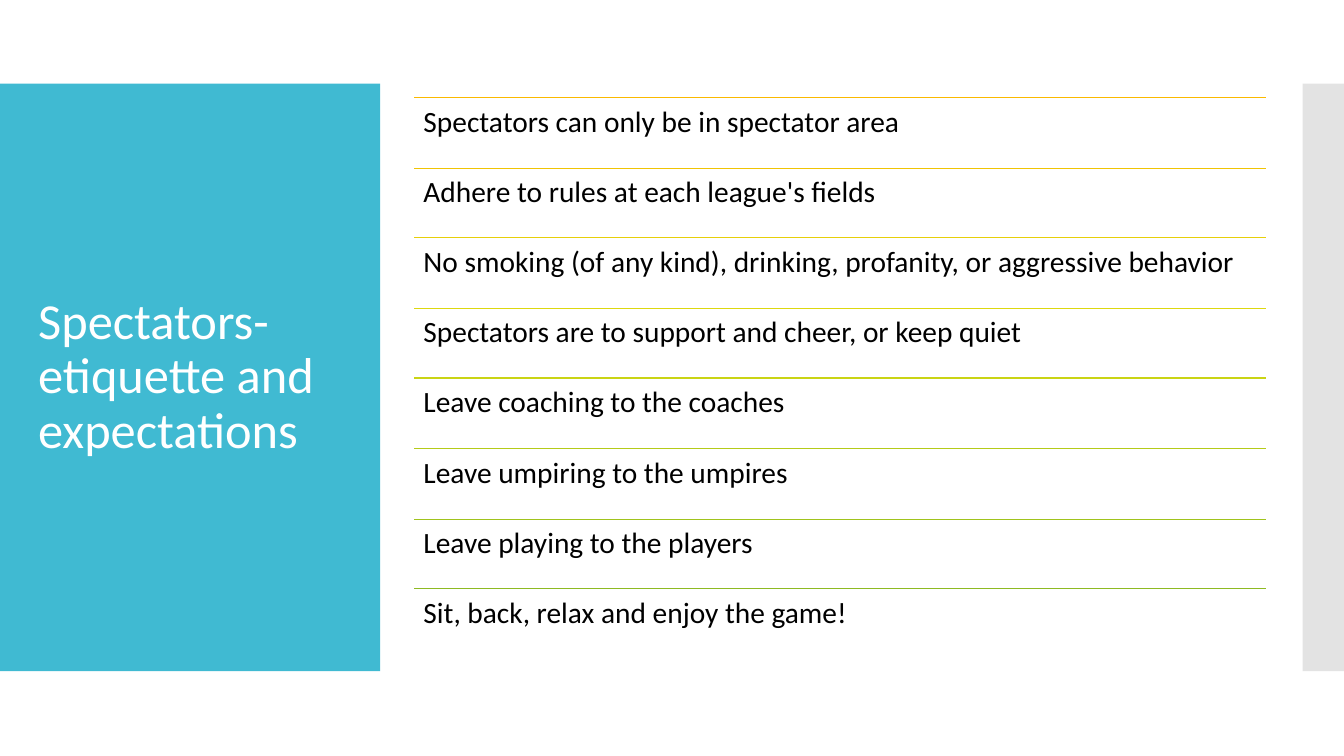
from dataclasses import dataclass

from lxml import etree
from pptx import Presentation
from pptx.dml.color import RGBColor
from pptx.enum.shapes import MSO_CONNECTOR, MSO_SHAPE
from pptx.enum.text import MSO_ANCHOR
from pptx.oxml.ns import qn
from pptx.slide import Slide
from pptx.util import Emu, Pt

RECTANGLE = MSO_SHAPE.RECTANGLE
STRAIGHT = MSO_CONNECTOR.STRAIGHT
TOP, MIDDLE = MSO_ANCHOR.TOP, MSO_ANCHOR.MIDDLE
EMU_PER_PX = 9144  # 100 px to the inch


@dataclass(frozen=True)
class Theme:
    font: str = "Calibri"
    panel: str = "40BAD2"
    side_bar: str = "C8C8C8"
    title_text: str = "FFFFFF"
    rule_text: str = "000000"
    title_size: float = 36
    rule_size: float = 21
    line_width: float = 0.85
    line_spacing: float = 0.9


@dataclass(frozen=True)
class Box:
    left: int
    top: int
    width: int
    height: int

    def emu(self) -> tuple[Emu, Emu, Emu, Emu]:
        return px(self.left), px(self.top), px(self.width), px(self.height)


@dataclass(frozen=True)
class Bar:
    box: Box
    color: str
    opacity: int = 100


@dataclass(frozen=True)
class Rule:
    text: str
    line_color: str


@dataclass(frozen=True)
class TextStyle:
    size: float
    color: str
    anchor: MSO_ANCHOR
    inset_x: int
    inset_y: int


THEME = Theme()
TITLE_STYLE = TextStyle(THEME.title_size, THEME.title_text, MIDDLE, 10, 5)
RULE_STYLE = TextStyle(THEME.rule_size, THEME.rule_text, TOP, 9, 9)

BARS = (
    Bar(Box(0, 83, 377, 583), THEME.panel),
    Bar(Box(1292, 83, 41, 583), THEME.side_bar, opacity=50),
)
TITLE = "Spectators- etiquette and expectations"
TITLE_BOX = Box(28, 123, 322, 503)
RULES = (
    Rule("Spectators can only be in spectator area", "FAB900"),
    Rule("Adhere to rules at each league's fields", "F0C404"),
    Rule("No smoking (of any kind), drinking, profanity, or aggressive behavior", "E6CF0A"),
    Rule("Spectators are to support and cheer, or keep quiet", "DDD80F"),
    Rule("Leave coaching to the coaches", "CAD414"),
    Rule("Leave umpiring to the umpires", "B5CB19"),
    Rule("Leave playing to the players", "A0C31D"),
    Rule("Sit, back, relax and enjoy the game!", "8EBA22"),
)
RULES_BOX = Box(411, 97, 845, 557)


def px(length: int) -> Emu:
    return Emu(length * EMU_PER_PX)


def add_bar(page: Slide, bar: Bar) -> None:
    shape = page.shapes.add_shape(RECTANGLE, *bar.box.emu())
    shape.shadow.inherit = False
    shape.line.fill.background()
    shape.fill.solid()
    shape.fill.fore_color.rgb = RGBColor.from_string(bar.color)
    if bar.opacity < 100:
        color = shape.fill._xPr.find(f".//{qn('a:srgbClr')}")
        etree.SubElement(color, qn("a:alpha"), val=str(bar.opacity * 1000))


def add_text(page: Slide, box: Box, text: str, style: TextStyle) -> None:
    frame = page.shapes.add_textbox(*box.emu()).text_frame
    frame.word_wrap = True
    frame.vertical_anchor = style.anchor
    frame.margin_left = frame.margin_right = px(style.inset_x)
    frame.margin_top = frame.margin_bottom = px(style.inset_y)
    frame.text = text
    para = frame.paragraphs[0]
    para.line_spacing = THEME.line_spacing
    for span in para.runs:
        span.font.name = THEME.font
        span.font.size = Pt(style.size)
        span.font.color.rgb = RGBColor.from_string(style.color)


def add_divider(page: Slide, box: Box, color: str) -> None:
    """Draw a line along the top edge of the box."""
    left, top, width, _ = box.emu()
    divider = page.shapes.add_connector(STRAIGHT, left, top, left + width, top)
    divider.line.color.rgb = RGBColor.from_string(color)
    divider.line.width = Pt(THEME.line_width)
    etree.SubElement(divider._element.spPr, qn("a:effectLst"))


def add_rules(page: Slide, area: Box, rules: tuple[Rule, ...]) -> None:
    """Stack the rules in rows of equal height, each under its divider."""
    pitch = area.height / len(rules)
    for index, rule in enumerate(rules):
        row = Box(area.left, area.top + round(index * pitch), area.width, round(pitch))
        add_divider(page, row, rule.line_color)
        add_text(page, row, rule.text, RULE_STYLE)


def main() -> None:
    deck = Presentation()
    deck.slide_width, deck.slide_height = px(1333), px(750)
    page = deck.slides.add_slide(deck.slide_layouts[6])
    for bar in BARS:
        add_bar(page, bar)
    add_text(page, TITLE_BOX, TITLE, TITLE_STYLE)
    add_rules(page, RULES_BOX, RULES)
    deck.save("out.pptx")


if __name__ == "__main__":
    main()
